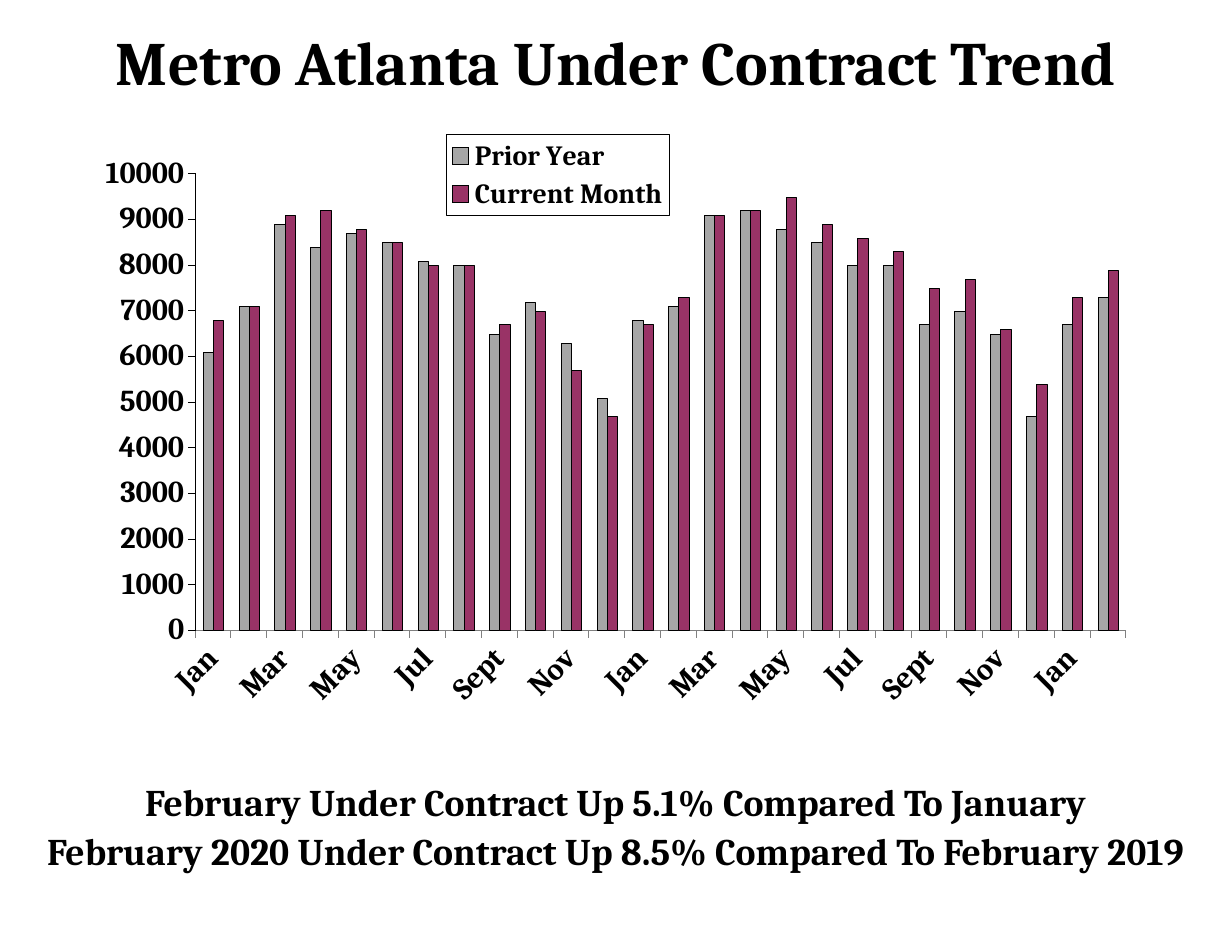
"""Build the Metro Atlanta under-contract trend slide."""
import lxml.etree
import pptx
import pptx.chart.data
import pptx.dml.color
import pptx.enum.chart
import pptx.enum.text
import pptx.oxml
import pptx.oxml.ns
import pptx.util
from pptx.util import Inches

FONT = "Cambria"
COLORS = {"text": "000000", "axis": "808080", "prior": "A6A6A6", "current": "993366"}
YEAR = ["Jan", "Feb", "Mar", "Apr", "May", "Jun",
        "Jul", "Aug", "Sept", "Oct", "Nov", "Dec"]
MONTHS = YEAR * 2 + YEAR[:2]
PRIOR = [6100, 7100, 8900, 8400, 8700, 8500, 8100, 8000, 6500, 7200, 6300, 5100,
         6800, 7100, 9100, 9200, 8800, 8500, 8000, 8000, 6700, 7000, 6500, 4700,
         6700, 7300]
CURRENT = [6800, 7100, 9100, 9200, 8800, 8500, 8000, 8000, 6700, 7000, 5700, 4700,
           6700, 7300, 9100, 9200, 9500, 8900, 8600, 8300, 7500, 7700, 6600, 5400,
           7300, 7900]
SUMMARY = ["February Under Contract Up 5.1% Compared To January",
           "February 2020 Under Contract Up 8.5% Compared To February 2019"]


def rgb(name):
    return pptx.dml.color.RGBColor.from_string(COLORS[name])


def style_font(font, size):
    font.name = FONT
    font.size = pptx.util.Pt(size)
    font.bold = True
    font.color.rgb = rgb("text")


def style_line(line, color, width):
    line.color.rgb = rgb(color)
    line.width = pptx.util.Pt(width)


def fill_text(frame, lines, size, spacing=None):
    frame.word_wrap = True
    frame.auto_size = pptx.enum.text.MSO_AUTO_SIZE.NONE
    frame.text = "\n".join(lines)
    for para in frame.paragraphs:
        para.alignment = pptx.enum.text.PP_ALIGN.CENTER
        if spacing:
            para.line_spacing = pptx.util.Pt(spacing)
        for span in para.runs:
            style_font(span.font, size)


def add_title(page, text):
    title = page.shapes.title
    title.left, title.top = Inches(0), Inches(0.31)
    title.width, title.height = Inches(11), Inches(0.46)
    title.text_frame.vertical_anchor = pptx.enum.text.MSO_ANCHOR.MIDDLE
    fill_text(title.text_frame, [text], 39.6)


def add_summary(page):
    box = page.shapes.add_textbox(Inches(0), Inches(6.92), Inches(11), Inches(0.88))
    frame = box.text_frame
    frame.margin_top = frame.margin_bottom = 0
    fill_text(frame, SUMMARY, 24.2, 31.5)


def set_layout(parent, index, values, inner=False):
    tag = pptx.oxml.ns.qn("c:layout")
    for old in parent.findall(tag):
        parent.remove(old)
    layout = lxml.etree.Element(tag)
    manual = lxml.etree.SubElement(layout, pptx.oxml.ns.qn("c:manualLayout"))
    settings = [("layoutTarget", "inner")] if inner else []
    settings += [("xMode", "edge"), ("yMode", "edge")]
    settings += zip("xywh", values)
    for name, value in settings:
        lxml.etree.SubElement(manual, pptx.oxml.ns.qn("c:" + name), val=str(value))
    parent.insert(index, layout)


def style_axes(chart):
    tick = pptx.enum.chart.XL_TICK_MARK
    months, counts = chart.category_axis, chart.value_axis
    for axis, color in ((months, "axis"), (counts, "text")):
        axis.has_major_gridlines = False
        axis.major_tick_mark = tick.OUTSIDE
        axis.minor_tick_mark = tick.NONE
        style_font(axis.tick_labels.font, 19.5)
        style_line(axis.format.line, color, 0.01)
    counts.minimum_scale, counts.maximum_scale, counts.major_unit = 0, 10000, 1000
    months.tick_label_position = pptx.enum.chart.XL_TICK_LABEL_POSITION.LOW
    element = months._element
    element.find(".//" + pptx.oxml.ns.qn("a:bodyPr")).set("rot", "-2700000")
    skip = lxml.etree.Element(pptx.oxml.ns.qn("c:tickLblSkip"), val="2")
    element.find(pptx.oxml.ns.qn("c:noMultiLvlLbl")).addprevious(skip)


def style_legend(chart):
    chart.has_legend = True
    legend = chart.legend
    legend.position = pptx.enum.chart.XL_LEGEND_POSITION.RIGHT
    legend.include_in_layout = False
    style_font(legend.font, 17.9)
    set_layout(legend._element, 1, (0.335, 0.034, 0.207, 0.125))
    frame = pptx.oxml.parse_xml(
        f'<c:spPr {pptx.oxml.ns.nsdecls("c", "a")}>'
        '<a:solidFill><a:srgbClr val="FFFFFF"/></a:solidFill><a:ln w="400"><a:solidFill>'
        f'<a:srgbClr val="{COLORS["text"]}"/></a:solidFill></a:ln></c:spPr>')
    legend._element.find(pptx.oxml.ns.qn("c:txPr")).addprevious(frame)


def add_trend_chart(page):
    data = pptx.chart.data.CategoryChartData()
    data.categories = MONTHS
    data.add_series("Prior Year", PRIOR)
    data.add_series("Current Month", CURRENT)
    chart = page.shapes.add_chart(
        pptx.enum.chart.XL_CHART_TYPE.COLUMN_CLUSTERED,
        Inches(0.75), Inches(1), Inches(9.64), Inches(5.81), data).chart
    chart.has_title = False
    style_font(chart.font, 19.5)
    plot = chart.plots[0]
    plot.gap_width, plot.overlap = 150, 0
    plot.vary_by_categories = False
    for series, color in zip(plot.series, ("prior", "current")):
        series.format.fill.solid()
        series.format.fill.fore_color.rgb = rgb(color)
        style_line(series.format.line, "text", 0.03)
    style_axes(chart)
    style_legend(chart)
    area = chart._chartSpace.find(".//" + pptx.oxml.ns.qn("c:plotArea"))
    set_layout(area, 0, (0.103, 0.095, 0.862, 0.702), inner=True)


def main():
    deck = pptx.Presentation()
    deck.slide_width, deck.slide_height = Inches(11), Inches(8.5)
    page = deck.slides.add_slide(deck.slide_layouts[5])
    add_summary(page)
    add_trend_chart(page)
    add_title(page, "Metro Atlanta Under Contract Trend")
    deck.save("out.pptx")


if __name__ == "__main__":
    main()
